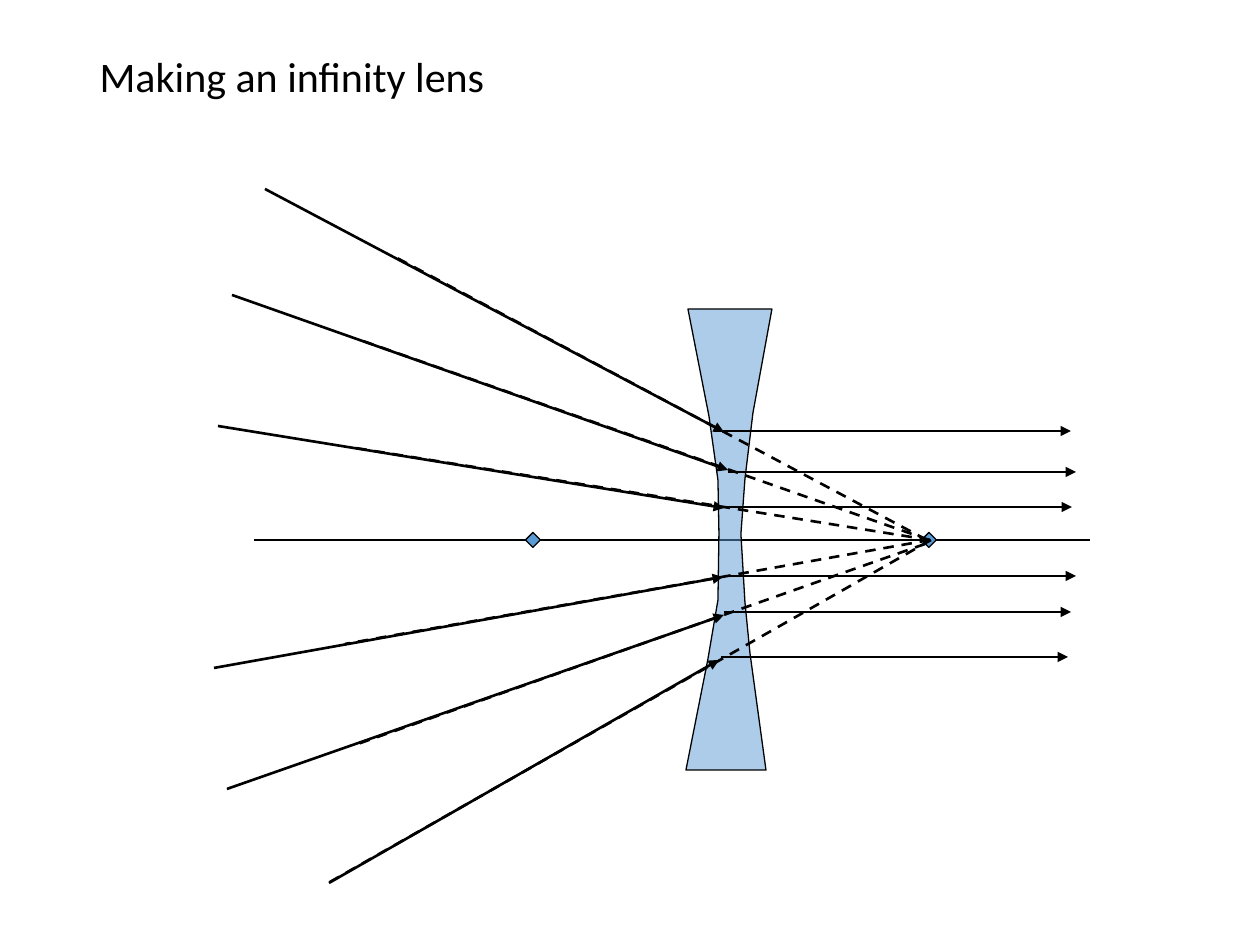
from typing import NamedTuple

from lxml.etree import SubElement
from pptx import Presentation
from pptx.dml.color import RGBColor
from pptx.enum.dml import MSO_LINE
from pptx.enum.shapes import MSO_CONNECTOR, MSO_SHAPE
from pptx.enum.text import MSO_ANCHOR, MSO_AUTO_SIZE, PP_ALIGN
from pptx.oxml.ns import qn
from pptx.util import Emu, Pt

PX = 914400 // 126
COLORS = {"ink": "000000", "glass": "5B9BD5", "background": "FFFFFF"}
AXIS_Y = 540
FOCUS_SIZE = 15
FOCUS_CENTERS = (533, 929)
LENS_OUTLINE = [
    (766, 770), (686, 770), (708, 659), (718, 600), (719, 533), (718, 480),
    (709, 416), (688, 309), (772, 309), (753, 413), (745, 479), (741, 534),
    (745, 602), (750, 653),
]


class Point(NamedTuple):
    x: int
    y: int


class Ray(NamedTuple):
    """A ray bent by the lens, with the dashed line to its virtual focus."""
    source: Point
    hit: Point
    exit_start: Point
    exit_end_x: int
    focus: Point
    dash_end: Point


RAYS = [
    Ray(Point(232, 295), Point(728, 470), Point(728, 472), 1076, Point(929, 540), Point(360, 340)),
    Ray(Point(265, 189), Point(724, 432), Point(724, 431), 1071, Point(927, 540), Point(397, 258)),
    Ray(Point(218, 426), Point(724, 508), Point(726, 507), 1072, Point(930, 540), Point(349, 447)),
    Ray(Point(227, 789), Point(724, 615), Point(724, 612), 1071, Point(925, 544), Point(355, 745)),
    Ray(Point(329, 883), Point(719, 660), Point(721, 657), 1068, Point(931, 540), Point(330, 882)),
    Ray(Point(214, 668), Point(723, 577), Point(728, 576), 1076, Point(930, 540), Point(345, 644)),
]


def px(value: int) -> Emu:
    return Emu(value * PX)


def color(name: str) -> RGBColor:
    return RGBColor.from_string(COLORS[name])


def style_line(line, width: float) -> None:
    line.color.rgb = color("ink")
    line.width = Pt(width)


def style_glass(shape, opacity: int = 100) -> None:
    shape.shadow.inherit = False
    shape.fill.solid()
    shape.fill.fore_color.rgb = color("glass")
    style_line(shape.line, 0.75)
    if opacity < 100:
        fill_color = shape._element.spPr.find(qn("a:solidFill"))[0]
        SubElement(fill_color, qn("a:alpha"), val=str(opacity * 1000))


def add_line(slide, start: Point, end: Point, width: float = 1.5,
             arrow: bool = False, dashed: bool = False) -> None:
    connector = slide.shapes.add_connector(
        MSO_CONNECTOR.STRAIGHT, px(start.x), px(start.y), px(end.x), px(end.y))
    style_line(connector.line, width)
    if dashed:
        connector.line.dash_style = MSO_LINE.DASH
    if arrow:
        SubElement(connector.line._get_or_add_ln(), qn("a:tailEnd"), type="triangle")
    SubElement(connector._element.spPr, qn("a:effectLst"))


def add_lens(slide) -> None:
    builder = slide.shapes.build_freeform(*LENS_OUTLINE[0], scale=PX)
    builder.add_line_segments(LENS_OUTLINE[1:], close=True)
    style_glass(builder.convert_to_shape(), opacity=50)


def add_focus(slide, center_x: int) -> None:
    diamond = slide.shapes.add_shape(
        MSO_SHAPE.DIAMOND, px(center_x) - px(FOCUS_SIZE) // 2,
        px(AXIS_Y) - px(FOCUS_SIZE) // 2, px(FOCUS_SIZE), px(FOCUS_SIZE))
    style_glass(diamond)


def add_ray(slide, ray: Ray) -> None:
    add_line(slide, ray.exit_start, Point(ray.exit_end_x, ray.exit_start.y), arrow=True)
    add_line(slide, ray.focus, ray.dash_end, dashed=True)
    add_line(slide, ray.source, ray.hit, arrow=True)


def set_title(slide, text: str) -> None:
    title = slide.shapes.title
    title.left, title.top, title.width, title.height = map(px, (87, 50, 1086, 183))
    frame = title.text_frame
    frame.text = text
    frame.auto_size = MSO_AUTO_SIZE.NONE
    frame.vertical_anchor = MSO_ANCHOR.TOP
    paragraph = frame.paragraphs[0]
    paragraph.alignment = PP_ALIGN.LEFT
    paragraph.line_spacing = 0.9
    paragraph.font.name = "Calibri"
    paragraph.font.size = Pt(24)
    paragraph.font.color.rgb = color("ink")


def main() -> None:
    presentation = Presentation()
    presentation.slide_width, presentation.slide_height = px(1260), px(945)
    slide = presentation.slides.add_slide(presentation.slide_layouts[5])
    slide.background.fill.solid()
    slide.background.fill.fore_color.rgb = color("background")

    set_title(slide, "Making an infinity lens")
    add_line(slide, Point(254, AXIS_Y), Point(1090, AXIS_Y), width=0.75)
    add_lens(slide)
    for center_x in FOCUS_CENTERS:
        add_focus(slide, center_x)
    for ray in RAYS:
        add_ray(slide, ray)
    presentation.save("out.pptx")


if __name__ == "__main__":
    main()
